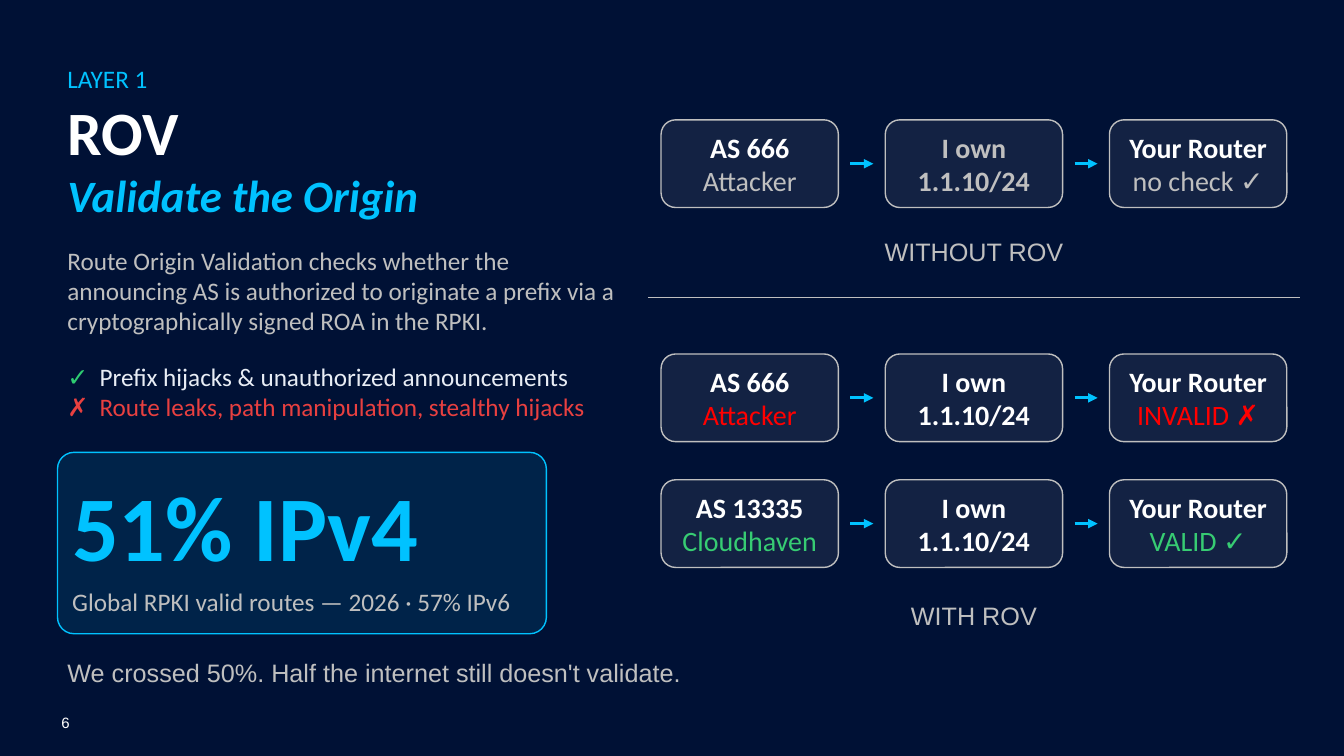
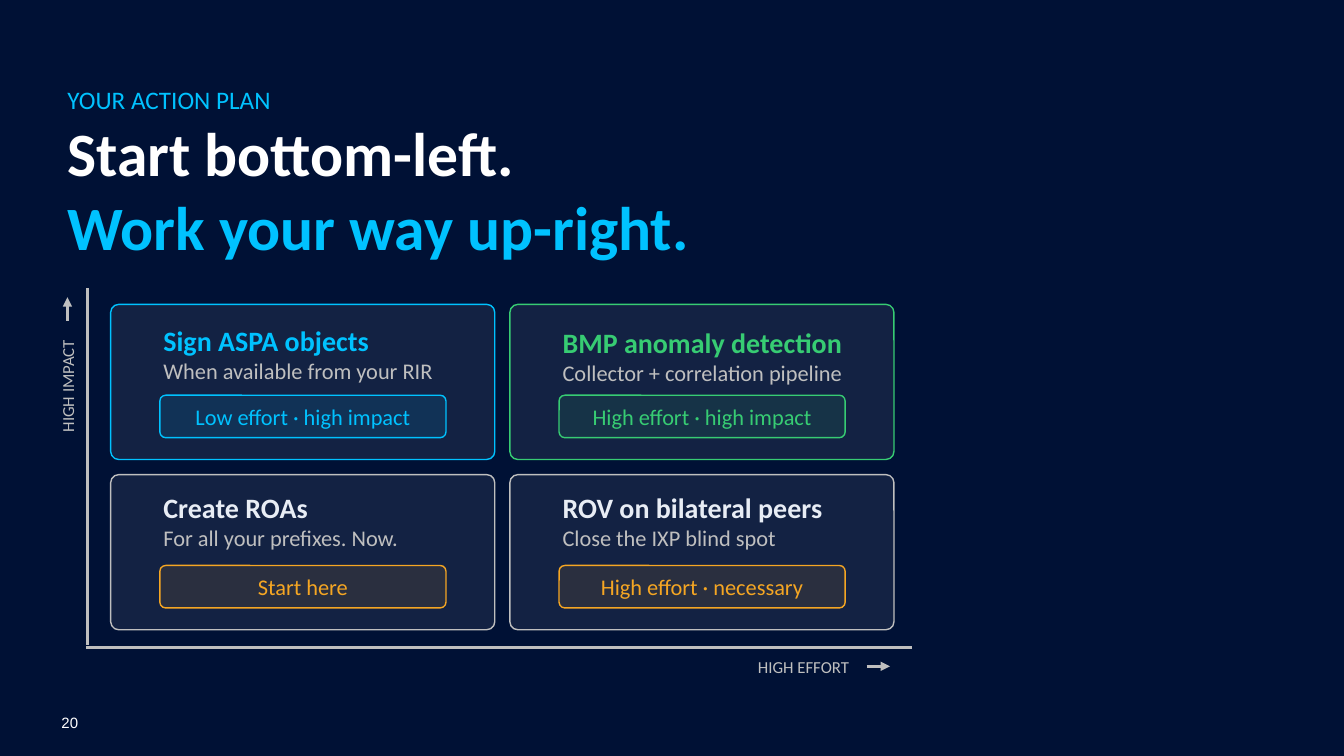
from lxml import etree
from pptx import Presentation
from pptx import util as u
from pptx.dml.color import RGBColor
from pptx.enum import shapes, text
from pptx.oxml.ns import qn

Cm, Pt = u.Cm, u.Pt

# Shared colours and fonts
NAVY, CYAN, WHITE, GREY, PALE = "001135", "00C2FF", "FFFFFF", "BFBFBF", "E8EDF5"
GREEN, LIME, RED, CORAL, AMBER = "37CC73", "2ECC71", "FF0000", "E84040", "F5A623"
BODY, PLAIN = "Calibri", "Arial"
LEFT = 1.45
CENTER = text.PP_ALIGN.CENTER
TOP, MIDDLE = text.MSO_ANCHOR.TOP, text.MSO_ANCHOR.MIDDLE

# Slide 1 content: each line is (text, size, colour, style)
ROV_TITLE = [("LAYER 1", 18, CYAN, ""), ("ROV", 44, WHITE, "b"),
             ("Validate the Origin", 32, CYAN, "bi")]
ROV_TEXT = ("Route Origin Validation checks whether the announcing AS is authorized "
            "to originate a prefix via a cryptographically signed ROA in the RPKI.")
ROV_CHECKS = [("✓", LIME, "Prefix hijacks & unauthorized announcements", PALE),
              ("✗", CORAL, "Route leaks, path manipulation, stealthy hijacks", CORAL)]
ROV_STAT = [("51% IPv4", 66, CYAN, "b"),
            ("Global RPKI valid routes — 2026 · 57% IPv6", 18, GREY, "")]
ROV_CLOSING = "We crossed 50%. Half the internet still doesn't validate."
# Flow rows: top, origin, name, name colour, claim colour, verdict, verdict colour
FLOWS = [(3.02, "AS 666", "Attacker", GREY, GREY, "no check ✓", GREY),
         (8.92, "AS 666", "Attacker", RED, WHITE, "INVALID ✗", RED),
         (12.09, "AS 13335", "Cloudhaven", GREEN, WHITE, "VALID ✓", GREEN)]
CAPTIONS = [("WITHOUT ROV", 5.82), ("WITH ROV", 15.01)]

# Slide 2 content
PLAN_TITLE = [("YOUR ACTION PLAN", 18, CYAN, ""), ("Start bottom-left.", 44, WHITE, "b"),
              ("Work your way up-right.", 44, CYAN, "b")]
# Cells: column, row, heading, heading colour, detail, outline, badge, badge colour, top inset
CELLS = [(0, 0, "Sign ASPA objects", CYAN, "When available from your RIR", CYAN,
          "Low effort · high impact", CYAN, 0.43),
         (1, 0, "BMP anomaly detection", GREEN, "Collector + correlation pipeline", GREEN,
          "High effort · high impact", GREEN, 0.48),
         (0, 1, "Create ROAs", PALE, "For all your prefixes. Now.", GREY,
          "Start here", AMBER, 0.35),
         (1, 1, "ROV on bilateral peers", PALE, "Close the IXP blind spot", GREY,
          "High effort · necessary", AMBER, 0.35)]


def rgb(color):
    return RGBColor.from_string(color)


def style_font(font, size, color, style="", name=BODY):
    font.name, font.size = name, Pt(size)
    font.bold, font.italic = "b" in style, "i" in style
    font.color.rgb = rgb(color)


def write(shape, lines, align=None, anchor=TOP, insets=(0.25, 0.13, 0.25, 0.13), name=BODY):
    frame = shape.text_frame
    frame.word_wrap = True
    frame.vertical_anchor = anchor
    (frame.margin_left, frame.margin_top,
     frame.margin_right, frame.margin_bottom) = [Cm(inset) for inset in insets]
    for index, (words, size, color, style) in enumerate(lines):
        paragraph = frame.add_paragraph() if index else frame.paragraphs[0]
        paragraph.text = words
        paragraph.alignment = align or text.PP_ALIGN.LEFT
        style_font(paragraph.font, size, color, style, name)
    return frame


def add_text(slide, left, top, width, height, lines, **options):
    box = slide.shapes.add_textbox(Cm(left), Cm(top), Cm(width), Cm(height))
    write(box, lines, **options)
    return box


def add_card(slide, left, top, width, height, color, outline, lines, radius=0.1667, **options):
    """Rounded box with a 10 % tint and a thin outline."""
    card = slide.shapes.add_shape(shapes.MSO_SHAPE.ROUNDED_RECTANGLE,
                                  Cm(left), Cm(top), Cm(width), Cm(height))
    card.adjustments[0] = radius
    card.shadow.inherit = False
    card.fill.solid()
    card.fill.fore_color.rgb = rgb(color)
    tint = card._element.spPr.find(qn("a:solidFill"))[0]
    etree.SubElement(tint, qn("a:alpha"), val="10000")
    card.line.color.rgb = rgb(outline)
    card.line.width = Pt(1)
    return write(card, lines, **{"anchor": MIDDLE, **options})


def add_line(slide, x1, y1, x2, y2, color=GREY, width=2.25, arrow=False):
    line = slide.shapes.add_connector(shapes.MSO_CONNECTOR.STRAIGHT,
                                      Cm(x1), Cm(y1), Cm(x2), Cm(y2))
    line.line.color.rgb = rgb(color)
    line.line.width = Pt(width)
    if arrow:
        etree.SubElement(line.line._get_or_add_ln(), qn("a:tailEnd"), type="triangle")
    etree.SubElement(line._element.spPr, qn("a:effectLst"))


def add_base(presentation, number, title, top, height):
    """Blank slide with its number and title block."""
    slide = presentation.slides.add_slide(presentation.slide_layouts[6])
    add_text(slide, 1.55, 17.98, 1, 0.46, [(number, 10.7, WHITE, "")], name=PLAIN,
             anchor=text.MSO_ANCHOR.BOTTOM, insets=(0, 0, 0, 0))
    add_text(slide, LEFT, top, 26.8, height, title, anchor=MIDDLE)
    return slide


def build_rov(presentation):
    slide = add_base(presentation, "6", ROV_TITLE, 1.45, 4.27)

    # Explanation and checks, with the marks in a hanging indent
    box = add_text(slide, LEFT, 6.05, 14.55, 4.75, [(ROV_TEXT, 18, GREY, "")])
    for index, (mark, mark_color, words, color) in enumerate(ROV_CHECKS):
        paragraph = box.text_frame.add_paragraph()
        properties = paragraph._p.get_or_add_pPr()
        properties.set("marL", str(Cm(0.81)))
        properties.set("indent", str(-Cm(0.81)))
        paragraph.space_before = Pt(0 if index else 18)
        for part, part_color in ((mark + "\t", mark_color), (words, color)):
            run = paragraph.add_run()
            run.text = part
            style_font(run.font, 18, part_color)

    # Key figure and closing line
    frame = add_card(slide, LEFT, 11.4, 12.32, 4.57, CYAN, CYAN, ROV_STAT, radius=0.091)
    frame.paragraphs[1].space_before = Pt(4.5)
    add_text(slide, LEFT, 16.43, 16.94, 1.02, [(ROV_CLOSING, 18, GREY, "")], name=PLAIN)

    # Flow rows: three boxes joined by short arrows
    left, pitch, width, height = 16.66, 5.65, 4.47, 2.21
    gap, arrow = 0.3, 0.58
    for top, origin, name, name_color, claim_color, verdict, verdict_color in FLOWS:
        steps = [[(origin, 20, WHITE, "b"), (name, 20, name_color, "")],
                 [("I own", 20, claim_color, "b"), ("1.1.10/24", 20, claim_color, "b")],
                 [("Your Router", 20, WHITE, "b"), (verdict, 20, verdict_color, "")]]
        for column, lines in enumerate(steps):
            x, middle = left + column * pitch, top + height / 2
            add_card(slide, x, top, width, height, GREY, GREY, lines, align=CENTER)
            if column:
                start = x - pitch + width + gap
                add_line(slide, start, middle, start + arrow, middle, CYAN, arrow=True)

    # Captions and divider
    for words, top in CAPTIONS:
        add_text(slide, 19.91, top, 9.27, 1.02, [(words, 18, GREY, "")],
                 align=CENTER, name=PLAIN)
    add_line(slide, 16.33, 7.49, 32.77, 7.49, width=0.5)


def build_plan(presentation):
    slide = add_base(presentation, "20", PLAN_TITLE, 1.98, 4.78)

    # Two by two matrix, a badge in each cell
    for column, row, heading, color, detail, outline, badge, badge_color, inset in CELLS:
        x, y = 2.79 + column * 10.06, 7.67 + row * 4.29
        add_card(slide, x, y, 9.68, 3.91, GREY, outline,
                 [(heading, 20, color, "b"), (detail, 16, GREY, "")],
                 radius=0.052, anchor=TOP, insets=(1.27, inset, 0.25, 0.13))
        add_card(slide, x + 1.24, y + 2.29, 7.21, 1.07, badge_color, badge_color,
                 [(badge, 16, badge_color, "")], radius=0.136, align=CENTER)

    # Axes, their labels and arrows
    add_line(slide, 2.21, 7.26, 2.21, 16.26)
    add_line(slide, 22.99, 16.31, 2.16, 16.31)
    for words, x, y, rotation in (("HIGH EFFORT", 19.1, 16.56, 0),
                                  ("HIGH IMPACT", 0.43, 9.37, 270)):
        label = add_text(slide, x, y, 2.54, 0.51, [(words, 12, GREY, "")],
                         insets=(0, 0, 0, 0))
        label.rotation = rotation
    add_line(slide, 21.84, 16.79, 22.43, 16.79, arrow=True)
    add_line(slide, 1.7, 8.08, 1.7, 7.49, arrow=True)


def main():
    presentation = Presentation()
    presentation.slide_width, presentation.slide_height = Cm(33.87), Cm(19.05)
    background = presentation.slide_master.background.fill
    background.solid()
    background.fore_color.rgb = rgb(NAVY)
    build_rov(presentation)
    build_plan(presentation)
    presentation.save("out.pptx")


if __name__ == "__main__":
    main()
